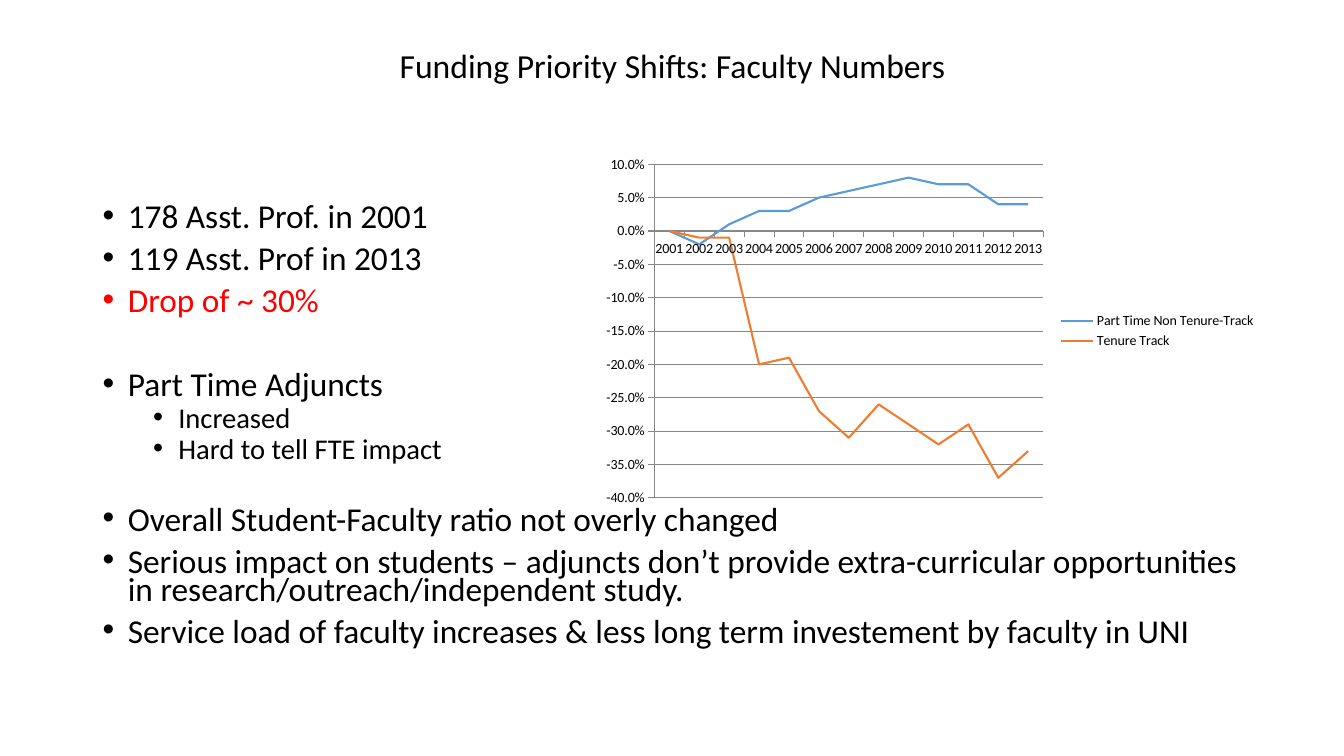
"""Build the slide on faculty numbers, with bullet points and a line chart."""
from dataclasses import dataclass

from lxml import etree
from pptx import Presentation
from pptx.chart.data import CategoryChartData
from pptx.dml.color import RGBColor
from pptx.enum.chart import XL_CHART_TYPE as ChartType, XL_LEGEND_POSITION as LegendPosition
from pptx.enum.chart import XL_TICK_MARK as TickMark
from pptx.enum.text import MSO_ANCHOR as Anchor, PP_ALIGN as Align
from pptx.oxml.ns import qn
from pptx.util import Inches, Pt


@dataclass(frozen=True)
class Theme:
    font: str = "Calibri"
    text: RGBColor = RGBColor(0, 0, 0)
    alert: RGBColor = RGBColor(255, 0, 0)
    axis: RGBColor = RGBColor(0x87, 0x87, 0x87)
    part_time: RGBColor = RGBColor(0x5B, 0x9B, 0xD5)
    tenure: RGBColor = RGBColor(0xED, 0x7D, 0x31)
    title_size: float = 24
    point_size: float = 23.8
    detail_size: float = 20.4
    chart_size: float = 10


theme = Theme()


def set_font(font, size, color=theme.text):
    font.name = theme.font
    font.size = Pt(size)
    font.bold = False
    font.color.rgb = color


def add_bullet(paragraph, indent):
    properties = paragraph._p.get_or_add_pPr()
    properties.set("marL", str(Inches(indent)))
    properties.set("indent", str(Inches(-0.25)))
    etree.SubElement(properties, qn("a:buFont")).set("typeface", "Arial")
    etree.SubElement(properties, qn("a:buChar")).set("char", "•")


presentation = Presentation()
presentation.slide_width = Inches(13.33)
presentation.slide_height = Inches(7.5)
slide = presentation.slides.add_slide(presentation.slide_layouts[5])

title = slide.shapes.title
title.left, title.top = Inches(0.92), Inches(0.4)
title.width, title.height = Inches(11.5), Inches(0.55)
title.text_frame.text = "Funding Priority Shifts: Faculty Numbers"
title.text_frame.vertical_anchor = Anchor.MIDDLE
title_paragraph = title.text_frame.paragraphs[0]
title_paragraph.alignment = Align.CENTER
title_paragraph.line_spacing = 0.9
set_font(title_paragraph.font, theme.title_size)

points = [
    ("178 Asst. Prof. in 2001", 0, 10, theme.text),
    ("119 Asst. Prof in 2013", 0, 10, theme.text),
    ("Drop of ~ 30%", 0, 10, theme.alert),
    ("Part Time Adjuncts", 0, 40, theme.text),
    ("Increased", 1, 5, theme.text),
    ("Hard to tell FTE impact", 1, 5, theme.text),
    ("Overall Student-Faculty ratio not overly changed", 0, 32, theme.text),
    ("Serious impact on students – adjuncts don’t provide extra-curricular "
     "opportunities in research/outreach/independent study.", 0, 10, theme.text),
    ("Service load of faculty increases & less long term investement by faculty in UNI",
     0, 10, theme.text),
]
body = slide.shapes.add_textbox(Inches(0.92), Inches(2), Inches(11.5), Inches(4.76))
frame = body.text_frame
frame.word_wrap = True
for index, (text, level, space_before, color) in enumerate(points):
    paragraph = frame.add_paragraph() if index else frame.paragraphs[0]
    paragraph.text = text
    paragraph.level = level
    add_bullet(paragraph, 0.25 + 0.5 * level)
    paragraph.line_spacing = 0.7
    paragraph.space_before = Pt(space_before)
    set_font(paragraph.font, theme.detail_size if level else theme.point_size, color)

faculty_change = CategoryChartData(number_format="0.0%")
faculty_change.categories = [str(year) for year in range(2001, 2014)]
faculty_change.add_series("Part Time Non Tenure-Track", [
    0, -0.02, 0.01, 0.03, 0.03, 0.05, 0.06, 0.07, 0.08, 0.07, 0.07, 0.04, 0.04])
faculty_change.add_series("Tenure Track", [
    0, -0.01, -0.01, -0.2, -0.19, -0.27, -0.31, -0.26, -0.29, -0.32, -0.29, -0.37, -0.33])
chart = slide.shapes.add_chart(
    ChartType.LINE, Inches(5.88), Inches(1.48), Inches(6.68), Inches(3.61), faculty_change).chart
set_font(chart.font, theme.chart_size)
chart.has_title = False
chart.has_legend = True
chart.legend.position = LegendPosition.RIGHT
chart.legend.include_in_layout = False

value_axis = chart.value_axis
value_axis.minimum_scale, value_axis.maximum_scale = -0.4, 0.1
value_axis.major_unit = 0.05
value_axis.tick_labels.number_format = "0.0%"
value_axis.tick_labels.number_format_is_linked = False
value_axis.has_major_gridlines = True
for axis in (chart.category_axis, value_axis):
    axis.major_tick_mark = TickMark.OUTSIDE
for line in (chart.category_axis.format.line, value_axis.format.line,
             value_axis.major_gridlines.format.line):
    line.color.rgb = theme.axis
    line.width = Pt(0.75)

for series, color in zip(chart.plots[0].series, (theme.part_time, theme.tenure)):
    series.smooth = False
    series.format.line.color.rgb = color
    series.format.line.width = Pt(1.5)

presentation.save("out.pptx")
